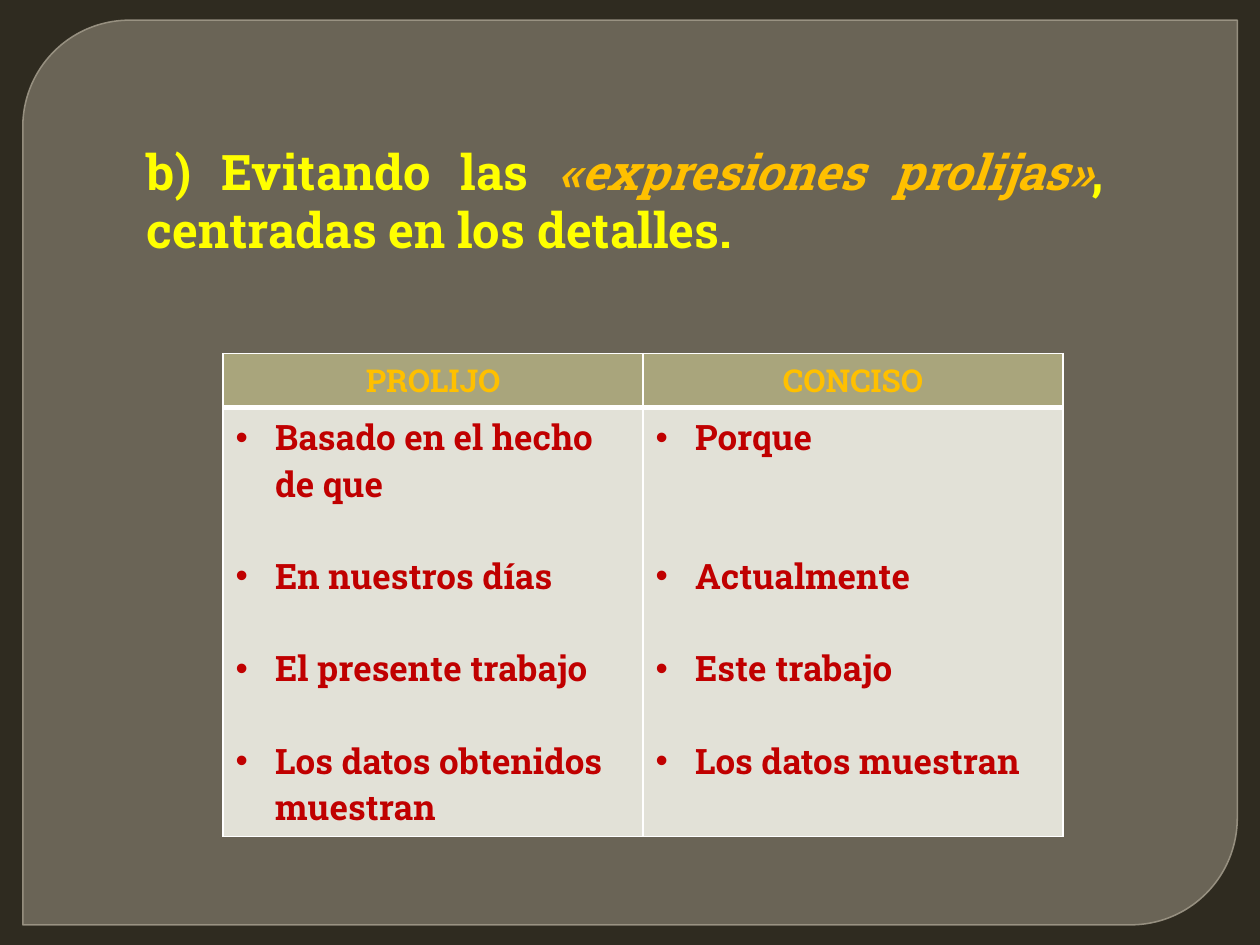
from dataclasses import dataclass

from lxml.etree import SubElement
from pptx import Presentation
from pptx.dml.color import RGBColor
from pptx.enum.shapes import MSO_SHAPE
from pptx.enum.text import MSO_ANCHOR, MSO_AUTO_SIZE, PP_ALIGN
from pptx.oxml.ns import qn
from pptx.util import Pt


@dataclass(frozen=True)
class Theme:
    font: str = "Roboto Slab"
    back: str = "2F2B20"
    panel: str = "8A8374"
    edge: str = "A09989"
    head: str = "A9A57C"
    body: str = "E2E1D7"
    rule: str = "FFFFFF"
    title: str = "FFFF00"
    gold: str = "FFC000"
    red: str = "C00000"
    large: int = 28
    small: int = 18
    item: int = 20
    line: float = 26.4
    indent: float = 22.5


def write(para, text, *, font, size, color, italic=False):
    run = para.add_run()
    run.text = text
    run.font.name = font
    run.font.size = Pt(size)
    run.font.bold = True
    run.font.italic = italic
    run.font.color.rgb = RGBColor.from_string(color)


def paint(fill, color, alpha=100):
    fill.solid()
    fill.fore_color.rgb = RGBColor.from_string(color)
    if alpha < 100:
        tone = fill._xPr.find(".//" + qn("a:srgbClr"))
        SubElement(tone, qn("a:alpha"), val=str(alpha * 1000))


class Deck:
    """Builds slides in one style."""

    def __init__(self, theme):
        self.theme = theme
        self.show = Presentation()
        self.show.slide_width, self.show.slide_height = Pt(720), Pt(540)
        self.slide = self.show.slides.add_slide(self.show.slide_layouts[5])
        paint(self.slide.background.fill, theme.back)

    def panel(self, *box):
        shape = self.slide.shapes.add_shape(
            MSO_SHAPE.ROUND_2_DIAG_RECTANGLE, *map(Pt, box))
        shape.adjustments[0], shape.adjustments[1] = 0.118, 0
        shape.shadow.inherit = False
        paint(shape.fill, self.theme.panel, 65)
        shape.line.width = Pt(0.87)
        paint(shape.line.fill, self.theme.edge, 88)
        tree = self.slide.shapes._spTree
        tree.insert(2, shape._element)

    def title(self, parts, *box):
        shape = self.slide.shapes.title
        shape.left, shape.top, shape.width, shape.height = map(Pt, box)
        frame = shape.text_frame
        frame.word_wrap = True
        frame.auto_size = MSO_AUTO_SIZE.NONE
        frame.vertical_anchor = MSO_ANCHOR.TOP
        para = frame.paragraphs[0]
        para.alignment = PP_ALIGN.JUSTIFY
        for text, color, italic in parts:
            write(para, text, font=self.theme.font, size=self.theme.large,
                  color=color, italic=italic)

    def border(self, cell, **sides):
        props = cell._tc.get_or_add_tcPr()
        for side in "LRTB":
            width = Pt(sides.get(side, 1))
            line = SubElement(props, qn("a:ln" + side), w=str(width))
            solid = SubElement(line, qn("a:solidFill"))
            SubElement(solid, qn("a:srgbClr"), val=self.theme.rule)

    def header(self, cell, text):
        self.border(cell, B=3)
        paint(cell.fill, self.theme.head)
        para = cell.text_frame.paragraphs[0]
        para.alignment = PP_ALIGN.CENTER
        write(para, text, font=self.theme.font, size=self.theme.small,
              color=self.theme.gold)

    def bullets(self, cell, items):
        theme = self.theme
        self.border(cell, T=3)
        paint(cell.fill, theme.body)
        frame = cell.text_frame
        for spot, (text, gap) in enumerate(items):
            para = frame.add_paragraph() if spot else frame.paragraphs[0]
            props = para._p.get_or_add_pPr()
            props.set("marL", str(Pt(theme.indent)))
            props.set("indent", str(-Pt(theme.indent)))
            SubElement(props, qn("a:buFont"), typeface="Arial")
            SubElement(props, qn("a:buChar"), char="•")
            if gap:
                para.space_before = Pt(gap * theme.line)
            write(para, text, font=theme.font, size=theme.item,
                  color=theme.red)

    def table(self, lists, rows, *box):
        table = self.slide.shapes.add_table(
            len(rows), len(lists), *map(Pt, box)).table
        table.horz_banding = False
        for row, height in zip(table.rows, rows):
            row.height = Pt(height)
        for col, (head, items) in enumerate(lists.items()):
            self.header(table.cell(0, col), head)
            self.bullets(table.cell(1, col), items)


def main():
    theme = Theme()
    deck = Deck(theme)
    deck.panel(13, 11.5, 694, 517)
    deck.title([
        ("b) Evitando las ", theme.title, False),
        ("«expresiones prolijas»", theme.gold, True),
        (", centradas en los detalles.", theme.title, False),
    ], 76.5, 77, 561.5, 75)
    deck.table({
        "PROLIJO": [
            ("Basado en el hecho de que", 0),
            ("En nuestros días", 1),
            ("El presente trabajo", 1),
            ("Los datos obtenidos muestran", 1),
        ],
        "CONCISO": [
            ("Porque", 0),
            ("Actualmente", 2),
            ("Este trabajo", 1),
            ("Los datos muestran", 1),
        ],
    }, (31, 245), 127.5, 202, 480, 276)
    deck.show.save("out.pptx")


if __name__ == "__main__":
    main()
